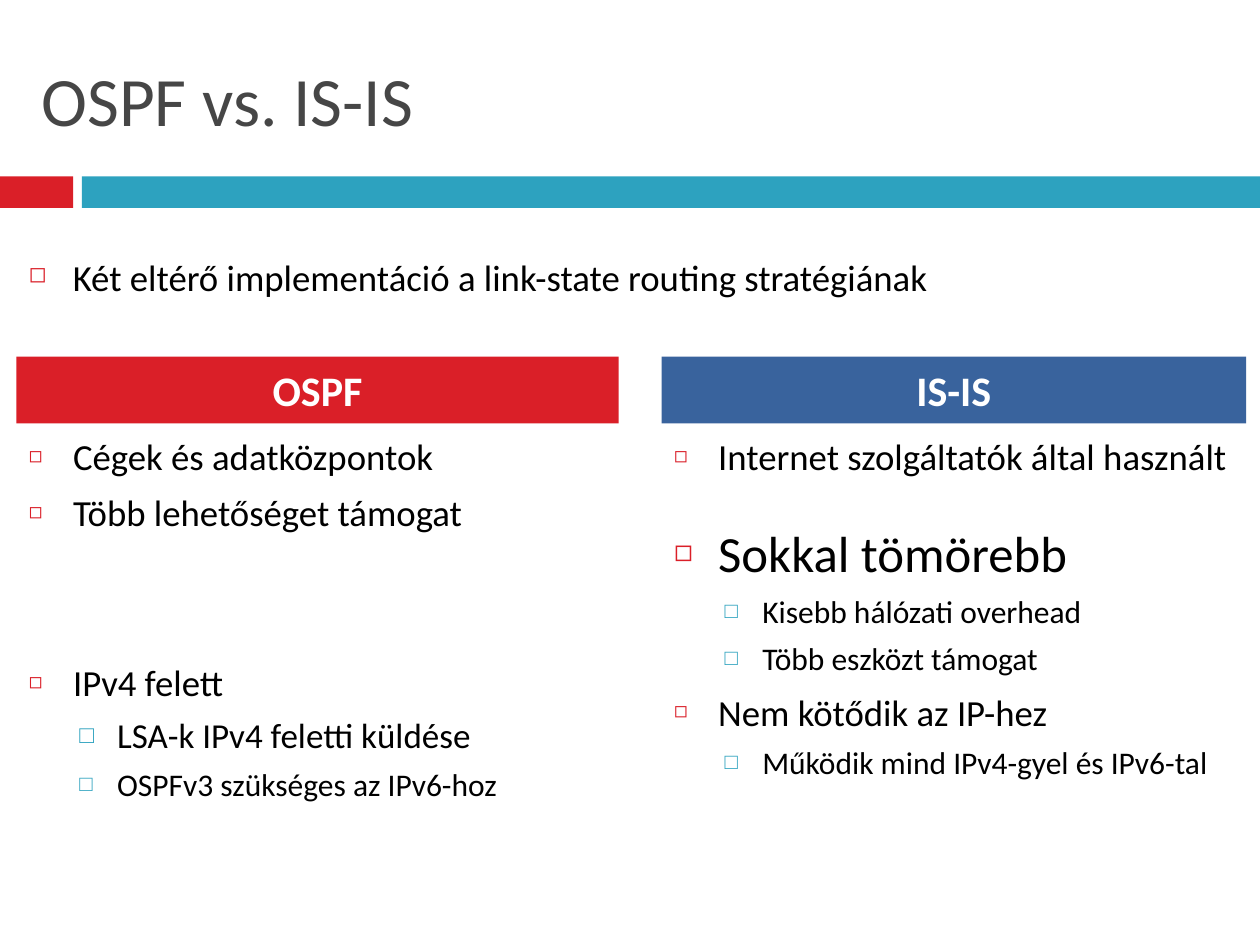
from lxml import etree
from pptx import Presentation
from pptx.dml.color import RGBColor
from pptx.enum.shapes import MSO_SHAPE
from pptx.enum.text import MSO_ANCHOR, MSO_AUTO_SIZE, PP_ALIGN
from pptx.oxml.ns import qn
from pptx.util import Inches, Pt

RECTANGLE = MSO_SHAPE.RECTANGLE
TOP, MIDDLE = MSO_ANCHOR.TOP, MSO_ANCHOR.MIDDLE
LEFT, CENTER = PP_ALIGN.LEFT, PP_ALIGN.CENTER
NO_AUTOFIT = MSO_AUTO_SIZE.NONE

RED = RGBColor(0xDA, 0x1F, 0x28)
TEAL = RGBColor(0x2D, 0xA2, 0xBF)
BLUE = RGBColor(0x39, 0x63, 0x9D)
GRAY = RGBColor(0x46, 0x46, 0x46)
BLACK = RGBColor(0, 0, 0)
WHITE = RGBColor(0xFF, 0xFF, 0xFF)

# Per list level: left indent, hanging indent, space before, bullet, colour, percent
LEVELS = [
    (0.35, 0.35, 7, "◻", RED, 60),
    (0.7, 0.3, 5.5, "□", TEAL, 70),
]
COMPARISON_LAYOUT = 4


def place(shape, left, top, width, height, anchor=TOP):
    shape.left, shape.top = Inches(left), Inches(top)
    shape.width, shape.height = Inches(width), Inches(height)
    if shape.has_text_frame:
        frame = shape.text_frame
        frame.word_wrap = True
        frame.auto_size = NO_AUTOFIT
        frame.vertical_anchor = anchor


def write(paragraph, text, size, color=BLACK, bold=False, align=LEFT,
          level=None, gap=0):
    """Fill a paragraph; a level gives it a bullet, gap adds points above it."""
    run = paragraph.add_run()
    run.text = text
    run.font.name = "Calibri"
    run.font.size = Pt(size)
    run.font.bold = bold
    run.font.color.rgb = color
    paragraph.alignment = align
    paragraph.line_spacing = 1.0
    paragraph.space_before = Pt(gap)
    if level is None:
        return
    indent, hanging, before, bullet, bullet_color, percent = LEVELS[level]
    paragraph.level = level
    paragraph.space_before = Pt(before + gap)
    properties = paragraph._p.get_or_add_pPr()
    properties.set("marL", str(Inches(indent)))
    properties.set("indent", str(-Inches(hanging)))
    color_element = etree.SubElement(properties, qn("a:buClr"))
    etree.SubElement(color_element, qn("a:srgbClr"), val=str(bullet_color))
    etree.SubElement(properties, qn("a:buSzPct"), val=str(percent * 1000))
    etree.SubElement(properties, qn("a:buChar"), char=bullet)


presentation = Presentation()
presentation.slide_width, presentation.slide_height = Inches(10), Inches(7.5)
slide = presentation.slides.add_slide(presentation.slide_layouts[COMPARISON_LAYOUT])
placeholders = {shape.placeholder_format.idx: shape for shape in slide.placeholders}

# Title and the two-part band below it
title = slide.shapes.title
place(title, 0.23, 0.43, 9.37, 0.71, anchor=MIDDLE)
write(title.text_frame.paragraphs[0], "OSPF vs. IS-IS", 39.6, color=GRAY)

for left, width, color in [(0, 0.58, RED), (0.65, 9.35, TEAL)]:
    band = slide.shapes.add_shape(RECTANGLE, 0, 0, 0, 0)
    place(band, left, 1.4, width, 0.25)
    band.shadow.inherit = False
    band.fill.solid()
    band.fill.fore_color.rgb = color
    band.line.fill.background()

# Introduction
introduction = slide.shapes.add_textbox(0, 0, 0, 0)
place(introduction, 0.13, 1.97, 9.73, 0.6)
write(introduction.text_frame.paragraphs[0],
      "Két eltérő implementáció a link-state routing stratégiának", 21, level=0)

# Columns: left, width, heading, colour, items of (text, size, level, extra gap)
columns = [
    (0.13, 4.78, "OSPF", RED, [
        ("Cégek és adatközpontok", 21, 0, 0),
        ("Több lehetőséget támogat", 21, 0, 0),
        ("IPv4 felett", 21, 0, 65),
        ("LSA-k IPv4 feletti küldése", 20, 1, 0),
        ("OSPFv3 szükséges az IPv6-hoz", 18, 1, 0),
    ]),
    (5.25, 4.64, "IS-IS", BLUE, [
        ("Internet szolgáltatók által használt", 21, 0, 0),
        ("Sokkal tömörebb", 29, 0, 18),
        ("Kisebb hálózati overhead", 18, 1, 0),
        ("Több eszközt támogat", 18, 1, 0),
        ("Nem kötődik az IP-hez", 21, 0, 0),
        ("Működik mind IPv4-gyel és IPv6-tal", 18, 1, 0),
    ]),
]

for number, (left, width, name, color, items) in enumerate(columns):
    heading, body = placeholders[2 * number + 1], placeholders[2 * number + 2]
    place(heading, left, 2.83, width, 0.53, anchor=MIDDLE)
    heading.fill.solid()
    heading.fill.fore_color.rgb = color
    write(heading.text_frame.paragraphs[0], name, 24, color=WHITE, bold=True,
          align=CENTER, gap=7)

    place(body, left, 3.39, width, 3.1)
    frame = body.text_frame
    for index, (text, size, level, gap) in enumerate(items):
        paragraph = frame.add_paragraph() if index else frame.paragraphs[0]
        write(paragraph, text, size, level=level, gap=gap)

presentation.save("out.pptx")
